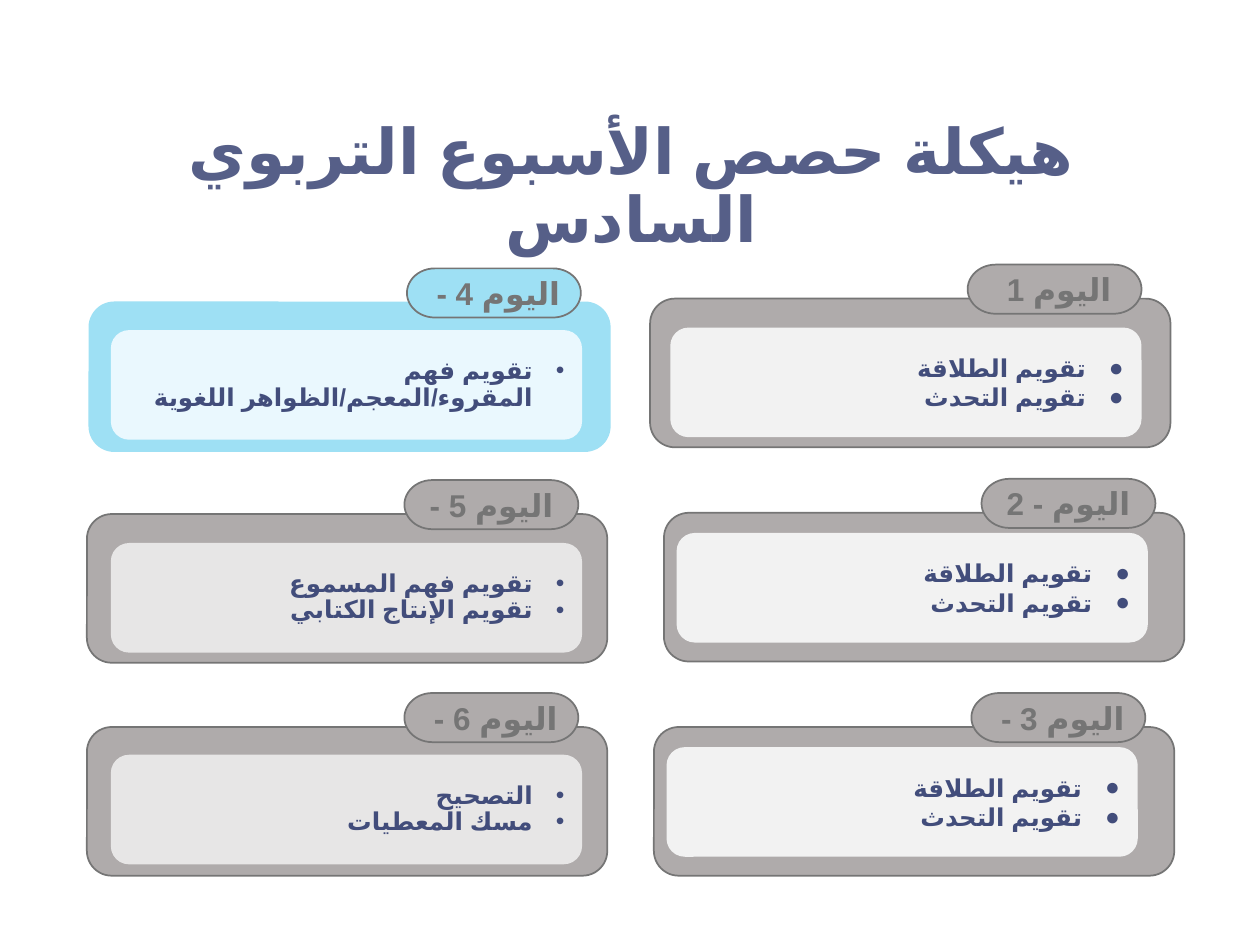
from lxml import etree
from pptx import Presentation
from pptx.dml.color import RGBColor
from pptx.enum.lang import MSO_LANGUAGE_ID as LANGUAGE
from pptx.enum.shapes import MSO_SHAPE as SHAPE
from pptx.enum.text import MSO_ANCHOR as ANCHOR, PP_ALIGN as ALIGN
from pptx.oxml.ns import qn
from pptx.util import Inches, Pt

COLORS = {
    "title": "565F88", "text": "424D7B", "edge": "757575",
    "grey": "AFABAB", "cyan": "9EE0F4",
    "pale_cyan": "EAF8FE", "pale_grey": "E7E6E6", "near_white": "F2F2F2",
}
CARD_SIZE = (4.13, 1.18)
TAB_SIZE = (1.38, 0.39)
TAB_OFFSET = (2.52, -0.27)
PANEL_SIZE = (3.74, 0.87)

# Bullet styles: the left column (days 4-6) and the right one (days 1-3)
LEFT_LIST = dict(font="Arial", bullet="•", indent=0.25, spacing=0.9)
RIGHT_LIST = dict(font="Lato", bullet="●", indent=0.3)
FLUENCY = ["تقويم الطلاقة", "تقويم التحدث"]

# label, card position, panel position, card colour, edge, panel colour, items, style
DAYS = [
    ("اليوم 6 - ", (0.69, 5.77), (0.88, 5.99), "grey", "edge", "pale_grey",
     ["التصحيح", "مسك المعطيات"], LEFT_LIST),
    ("اليوم 5 -", (0.69, 4.08), (0.88, 4.31), "grey", "edge", "pale_grey",
     ["تقويم فهم المسموع ", "تقويم الإنتاج الكتابي"], LEFT_LIST),
    ("اليوم 4 - ", (0.71, 2.4), (0.88, 2.62), "cyan", "cyan", "pale_cyan",
     ["تقويم فهم المقروء/المعجم/الظواهر اللغوية"], LEFT_LIST),
    ("اليوم 1 ", (5.16, 2.37), (5.32, 2.6), "grey", "edge", "near_white",
     FLUENCY, RIGHT_LIST),
    ("اليوم 3 - ", (5.19, 5.77), (5.29, 5.93), "grey", "edge", "near_white",
     FLUENCY, RIGHT_LIST),
    ("اليوم - 2", (5.27, 4.07), (5.37, 4.23), "grey", "edge", "near_white",
     FLUENCY, RIGHT_LIST),
]


def rgb(name):
    return RGBColor.from_string(COLORS[name])


def add_bullet(properties, bullet, indent, color):
    properties.set("marL", str(Inches(indent)))
    properties.set("indent", str(-Inches(indent)))
    bullet_color = etree.SubElement(properties, qn("a:buClr"))
    etree.SubElement(bullet_color, qn("a:srgbClr"), val=COLORS[color])
    etree.SubElement(properties, qn("a:buFont"), typeface="Arial")
    etree.SubElement(properties, qn("a:buChar"), char=bullet)


def write(shape, lines, size=18, color="text", font="Lato", align=ALIGN.CENTER,
          bullet=None, indent=0, spacing=None, side_inset=0.1):
    """Fill a shape with bold right-to-left paragraphs."""
    frame = shape.text_frame
    frame.word_wrap = True
    frame.vertical_anchor = ANCHOR.MIDDLE
    frame.margin_left = frame.margin_right = Inches(side_inset)
    for number, line in enumerate(lines):
        paragraph = frame.add_paragraph() if number else frame.paragraphs[0]
        paragraph.alignment = align
        properties = paragraph._p.get_or_add_pPr()
        properties.set("rtl", "1")
        if bullet:
            add_bullet(properties, bullet, indent, color)
        if spacing:
            paragraph.line_spacing = spacing
        run = paragraph.add_run()
        run.text = line
        run.font.size = Pt(size)
        run.font.bold = True
        run.font.color.rgb = rgb(color)
        run.font.name = font
        run.font.language_id = LANGUAGE.ARABIC_MOROCCO
        # Arabic letters take the complex-script font
        etree.SubElement(run._r.get_or_add_rPr(), qn("a:cs"), typeface="Arial")


def add_box(slide, kind, position, size, fill, edge=None):
    box = slide.shapes.add_shape(kind, *map(Inches, position + size))
    box.shadow.inherit = False
    box.fill.solid()
    box.fill.fore_color.rgb = rgb(fill)
    if edge:
        box.line.color.rgb = rgb(edge)
        box.line.width = Pt(1)
    else:
        box.line.fill.background()
    return box


def add_title(slide, text):
    title = slide.shapes.title
    title.left, title.top = Inches(0.7), Inches(1.1)
    title.width, title.height = Inches(8.62), Inches(0.79)
    write(title, [text], size=36, color="title", spacing=0.9)


def add_day(slide, label, card_at, panel_at, fill, edge, panel_fill, items, style):
    # Card with its day tab on the upper edge
    add_box(slide, SHAPE.ROUNDED_RECTANGLE, card_at, CARD_SIZE, fill, edge)
    tab_at = tuple(a + b for a, b in zip(card_at, TAB_OFFSET))
    tab = add_box(slide, SHAPE.FLOWCHART_TERMINATOR, tab_at, TAB_SIZE, fill, "edge")
    write(tab, [label], color="edge", side_inset=0.05)
    # Panel with the day's sessions
    panel = add_box(slide, SHAPE.ROUNDED_RECTANGLE, panel_at, PANEL_SIZE, panel_fill)
    write(panel, items, size=14, align=ALIGN.RIGHT, **style)


def main():
    deck = Presentation()
    deck.slide_width, deck.slide_height = Inches(10), Inches(7.5)
    slide = deck.slides.add_slide(deck.slide_layouts[5])
    add_title(slide, "هيكلة حصص الأسبوع التربوي السادس")
    for day in DAYS:
        add_day(slide, *day)
    deck.save("out.pptx")


if __name__ == "__main__":
    main()
